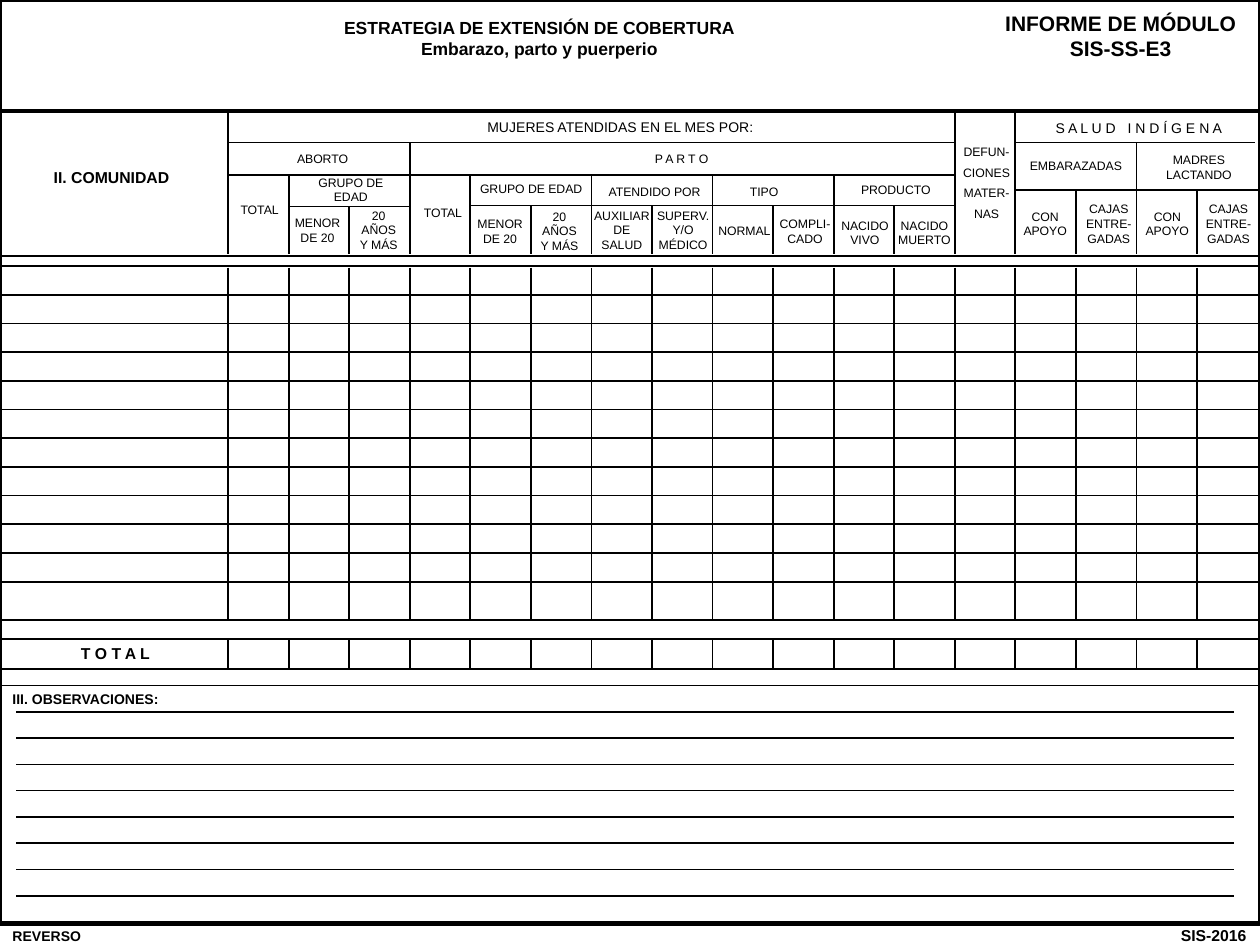
from lxml import etree
from pptx import Presentation
from pptx.dml.color import RGBColor
from pptx.enum.shapes import MSO_CONNECTOR, MSO_SHAPE
from pptx.enum.text import MSO_ANCHOR, MSO_AUTO_SIZE, PP_ALIGN
from pptx.oxml.ns import qn
from pptx.util import Pt

LEFT, CENTER, RIGHT = PP_ALIGN.LEFT, PP_ALIGN.CENTER, PP_ALIGN.RIGHT
TOP = MSO_ANCHOR.TOP
FIT = MSO_AUTO_SIZE.SHAPE_TO_FIT_TEXT
STRAIGHT = MSO_CONNECTOR.STRAIGHT
BLACK = RGBColor.from_string("000000")
WIDTH, HEIGHT = 720, 540

presentation = Presentation()
presentation.slide_width, presentation.slide_height = Pt(WIDTH), Pt(HEIGHT)
slide = presentation.slides.add_slide(presentation.slide_layouts[6])


def add_line(x1, y1, x2, y2, weight=1):
    line = slide.shapes.add_connector(STRAIGHT, Pt(x1), Pt(y1), Pt(x2), Pt(y2))
    line.line.color.rgb = BLACK
    line.line.width = Pt(weight)
    etree.SubElement(line._element.spPr, qn("a:effectLst"))


def add_text(text, x, y, width, rows=1, size=7, bold=False, align=CENTER, spacing=1):
    """One paragraph per text line; rows is the number of lines after wrapping."""
    height = rows * size * 1.15 * spacing + 7.2
    box = slide.shapes.add_textbox(Pt(x), Pt(y), Pt(width), Pt(height))
    frame = box.text_frame
    frame.word_wrap = True
    frame.auto_size = FIT
    frame.vertical_anchor = TOP
    for number, content in enumerate(text.split("\n")):
        paragraph = frame.add_paragraph() if number else frame.paragraphs[0]
        paragraph.alignment = align
        paragraph.line_spacing = spacing
        run = paragraph.add_run()
        run.text = content
        run.font.name = "Arial"
        run.font.size = Pt(size)
        run.font.bold = bold
        run.font.color.rgb = BLACK


# Page frame
frame_shape = slide.shapes.add_shape(MSO_SHAPE.RECTANGLE, 0, 0, Pt(WIDTH), Pt(527.8))
frame_shape.shadow.inherit = False
frame_shape.fill.background()
frame_shape.line.color.rgb = BLACK
frame_shape.line.width = Pt(2.5)

# Titles, section headings and footer
add_text("INFORME DE MÓDULO\nSIS-SS-E3", 555.8, 2.2, 169.2, 2, 12, True)
add_text("ESTRATEGIA DE EXTENSIÓN DE COBERTURA\nEmbarazo, parto y puerperio",
         162, 6.1, 292.3, 2, 10, True)
add_text("II. COMUNIDAD", 15.8, 92.2, 95.8, size=9, bold=True)
add_text("T O T A L", 5.8, 364.3, 120.2, size=9, bold=True)
add_text("III. OBSERVACIONES:", 0, 391, 173.5, size=8, bold=True, align=LEFT)
add_text("REVERSO", 0, 526.3, 63.4, size=8, bold=True, align=LEFT)
add_text("SIS-2016", 646.6, 525.6, 72.7, size=9, bold=True, align=RIGHT)

# Full-width rules: header, table body, total row, observations
add_line(0, 63.4, WIDTH, 63.4, 2)
body_rows = [152 + 16.4 * row for row in range(12)]
for y in [146.2, *body_rows, 354.2, 365, 382.3, 391.7]:
    add_line(0, y, WIDTH, y)

# Writing lines for observations
for row in range(9):
    y = 406.8 + 15 * row
    add_line(9.4, y, 704.9, y)

# Column rules: heading part, body and total row
columns = [130.4 + 34.6 * column for column in range(17)]
heading_tops = [64, 100, 118, 82, 100, 118, 100, 118, 100, 118, 100, 118,
                64, 64, 109.4, 82, 109.4]
for x, heading_top in zip(columns, heading_tops):
    for top, bottom in [(heading_top, 145), (153, 354), (365, 382.3)]:
        add_line(x, top, x, bottom)

# Rules between heading levels
for x1, x2, y in [
    (columns[0], columns[12], 81.4),
    (columns[13], 717, 81.4),
    (columns[0], columns[12], 100),
    (columns[1], columns[3], 118),
    (columns[4], columns[12], 117.4),
    (columns[13], WIDTH, 108.7),
]:
    add_line(x1, y, x2, y)

# Group headings
add_text("MUJERES ATENDIDAS EN EL MES POR:", 133.2, 64.1, 442.8, size=8)
add_text("S A L U D   I N D Í G E N A", 581, 64.8, 139.7, size=8)
add_text("DEFUN-\nCIONES\nMATER-\nNAS", 536.4, 75.6, 54.7, 4, spacing=1.4)

# Column headings: text, left, top, width, wrapped lines
for heading in [
    ("ABORTO", 134.6, 82.8, 99.4, 1),
    ("P A R T O", 234.7, 82.8, 309.6, 1),
    ("EMBARAZADAS", 581, 87.1, 67.7, 1),
    ("MADRES LACTANDO", 657.4, 83.5, 55.4, 2),
    ("GRUPO DE EDAD", 169.2, 96.5, 62.6, 2),
    ("GRUPO DE EDAD", 265.7, 100.1, 75.6, 1),
    ("ATENDIDO POR", 337.7, 101.5, 72.7, 1),
    ("TIPO", 403.9, 101.5, 65.5, 1),
    ("PRODUCTO", 483.1, 100.8, 57.6, 1),
    ("TOTAL", 128.2, 112.3, 40.3, 1),
    ("MENOR DE 20", 159.8, 119.5, 43.2, 2),
    ("20 AÑOS Y MÁS", 196.6, 115.2, 39.6, 3),
    ("TOTAL", 233.3, 113.8, 39.6, 1),
    ("MENOR DE 20", 264.2, 120.2, 43.2, 2),
    ("20 AÑOS Y MÁS", 299.9, 115.9, 39.6, 3),
    ("AUXILIAR DE SALUD", 331.9, 115.2, 46.8, 3),
    ("SUPERV. Y/O MÉDICO", 367.9, 115.2, 44.9, 3),
    ("NORMAL", 402, 123.8, 46.8, 1),
    ("COMPLI-CADO", 433.4, 120.2, 53.3, 2),
    ("NACIDO VIVO", 473, 121, 42.5, 2),
    ("NACIDO MUERTO", 505.4, 121, 45.6, 2),
    ("CON APOYO", 576, 115.9, 42.5, 2),
    ("CAJAS ENTRE-GADAS", 607.7, 111.6, 51.8, 3),
    ("CON APOYO", 645.8, 115.9, 42.5, 2),
    ("CAJAS ENTRE-GADAS", 676.1, 111.6, 51.8, 3),
]:
    add_text(*heading)

presentation.save("out.pptx")
